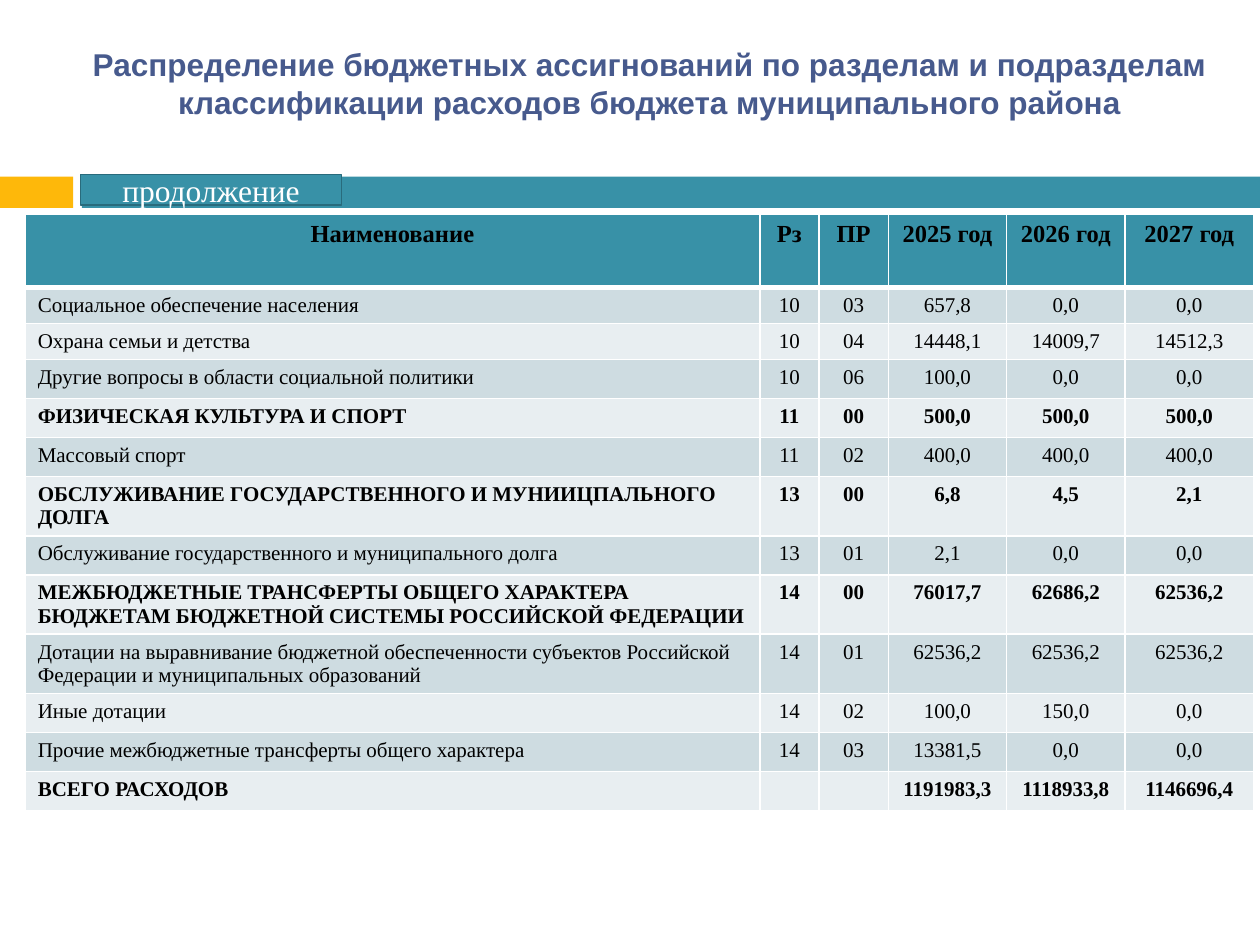
from typing import NamedTuple

from lxml.etree import SubElement
from pptx import Presentation
from pptx.dml.color import RGBColor
from pptx.enum.shapes import MSO_SHAPE
from pptx.enum.text import MSO_ANCHOR, PP_ALIGN
from pptx.oxml.ns import qn
from pptx.util import Inches, Pt

WIDE, HIGH = 10, 7.5
TEAL = RGBColor(0x38, 0x91, 0xA7)
EDGE = RGBColor(0x29, 0x6B, 0x7C)
GOLD = RGBColor(0xFE, 0xB8, 0x0A)
NAVY = RGBColor(0x47, 0x5A, 0x8D)
DARK = RGBColor(0xCE, 0xDC, 0xE1)
PALE = RGBColor(0xE8, 0xEE, 0xF1)
BLACK = RGBColor(0, 0, 0)
WHITE = RGBColor(0xFF, 0xFF, 0xFF)
SERIF = "Times New Roman"


class Box(NamedTuple):
    """A place on the slide, as shares of its width and height."""
    left: float
    top: float
    width: float
    height: float

    def place(self) -> tuple:
        return (Inches(self.left * WIDE), Inches(self.top * HIGH),
                Inches(self.width * WIDE), Inches(self.height * HIGH))


class Style(NamedTuple):
    font: str
    size: int
    color: RGBColor
    bold: bool = False


class Row(NamedTuple):
    """A budget line: name, section, subsection and yearly sums."""
    name: str
    group: str
    sub: str
    sums: tuple
    bold: bool = False
    height: float = 0.31


TITLE = Box(0.043, 0.033, 0.945, 0.11)
TABLE = Box(0.02, 0.227, 0.975, 0.647)
GOLD_BAR = Box(0, 0.187, 0.058, 0.033)
TEAL_BAR = Box(0.065, 0.187, 0.935, 0.033)
LABEL = Box(0.064, 0.185, 0.207, 0.032)

COLS = (5.83, 0.47, 0.55, 0.94, 0.94, 1.02)
ROWS = (
    Row("Наименование", "Рз", "ПР", ("2025 год", "2026 год", "2027 год"), True, 0.58),
    Row("Социальное обеспечение населения", "10", "03", ("657,8", "0,0", "0,0"), height=0.21),
    Row("Охрана семьи и детства", "10", "04", ("14448,1", "14009,7", "14512,3"), height=0.22),
    Row("Другие вопросы в области социальной политики", "10", "06", ("100,0", "0,0", "0,0")),
    Row("ФИЗИЧЕСКАЯ КУЛЬТУРА И СПОРТ", "11", "00", ("500,0", "500,0", "500,0"), True),
    Row("Массовый спорт", "11", "02", ("400,0", "400,0", "400,0")),
    Row("ОБСЛУЖИВАНИЕ ГОСУДАРСТВЕННОГО И МУНИИЦПАЛЬНОГО ДОЛГА", "13", "00",
        ("6,8", "4,5", "2,1"), True, 0.27),
    Row("Обслуживание государственного и муниципального долга", "13", "01", ("2,1", "0,0", "0,0")),
    Row("МЕЖБЮДЖЕТНЫЕ ТРАНСФЕРТЫ ОБЩЕГО ХАРАКТЕРА БЮДЖЕТАМ БЮДЖЕТНОЙ СИСТЕМЫ "
        "РОССИЙСКОЙ ФЕДЕРАЦИИ", "14", "00", ("76017,7", "62686,2", "62536,2"), True),
    Row("Дотации на выравнивание бюджетной обеспеченности субъектов Российской "
        "Федерации и муниципальных образований", "14", "01", ("62536,2", "62536,2", "62536,2")),
    Row("Иные дотации", "14", "02", ("100,0", "150,0", "0,0")),
    Row("Прочие межбюджетные трансферты общего характера", "14", "03", ("13381,5", "0,0", "0,0")),
    Row("ВСЕГО РАСХОДОВ", "", "", ("1191983,3", "1118933,8", "1146696,4"), True),
)


def write(frame, text: str, style: Style, align=PP_ALIGN.CENTER) -> None:
    para = frame.paragraphs[0]
    para.alignment = align
    if not text:  # an empty cell still needs its text size
        SubElement(para._p, qn("a:endParaRPr"), sz=str(style.size * 100))
        return
    run = para.add_run()
    run.text = text
    run.font.name = style.font
    run.font.size = Pt(style.size)
    run.font.bold = style.bold
    run.font.color.rgb = style.color


def add_bar(slide, box: Box, fill: RGBColor):
    bar = slide.shapes.add_shape(MSO_SHAPE.RECTANGLE, *box.place())
    bar.shadow.inherit = False
    bar.fill.solid()
    bar.fill.fore_color.rgb = fill
    bar.line.fill.background()
    return bar


def add_label(slide) -> None:
    label = add_bar(slide, LABEL, TEAL)
    label.line.color.rgb = EDGE
    label.line.width = Pt(0)
    label.text_frame.vertical_anchor = MSO_ANCHOR.MIDDLE
    write(label.text_frame, "продолжение", Style(SERIF, 18, WHITE))


def set_edges(cell, base: float) -> None:
    """Draw white borders, 1 point wide but for the base."""
    props = cell._tc.get_or_add_tcPr()
    widths = {"a:lnL": 1, "a:lnR": 1, "a:lnT": 1, "a:lnB": base}
    for spot, (tag, width) in enumerate(widths.items()):
        line = SubElement(props, qn(tag), w=str(int(Pt(width))))
        fill = SubElement(line, qn("a:solidFill"))
        SubElement(fill, qn("a:srgbClr"), val=str(WHITE))
        props.insert(spot, line)


def add_budget(slide) -> None:
    table = slide.shapes.add_table(len(ROWS), len(COLS), *TABLE.place()).table
    for col, width in zip(table.columns, COLS):
        col.width = Inches(width)
    for i, row in enumerate(ROWS):
        head = i == 0
        table.rows[i].height = Inches(row.height)
        fill = TEAL if head else (DARK if i % 2 else PALE)
        style = Style(SERIF, 14 if head else 12, BLACK, row.bold)
        for j, text in enumerate((row.name, row.group, row.sub, *row.sums)):
            cell = table.cell(i, j)
            cell.fill.solid()
            cell.fill.fore_color.rgb = fill
            set_edges(cell, 3 if head else 1)
            left = j == 0 and not head
            write(cell.text_frame, text, style, PP_ALIGN.LEFT if left else PP_ALIGN.CENTER)


def add_title(slide) -> None:
    title = slide.shapes.title
    title.left, title.top, title.width, title.height = TITLE.place()
    title.text_frame.word_wrap = True
    title.text_frame.vertical_anchor = MSO_ANCHOR.MIDDLE
    write(title.text_frame, "Распределение бюджетных ассигнований по разделам и подразделам "
          "классификации расходов бюджета муниципального района", Style("Arial", 18, NAVY, True))


def main() -> None:
    deck = Presentation()
    deck.slide_width, deck.slide_height = Inches(WIDE), Inches(HIGH)
    slide = deck.slides.add_slide(deck.slide_layouts[5])
    add_bar(slide, GOLD_BAR, GOLD)
    add_bar(slide, TEAL_BAR, TEAL)
    add_title(slide)
    add_budget(slide)
    add_label(slide)
    deck.save("out.pptx")


if __name__ == "__main__":
    main()
